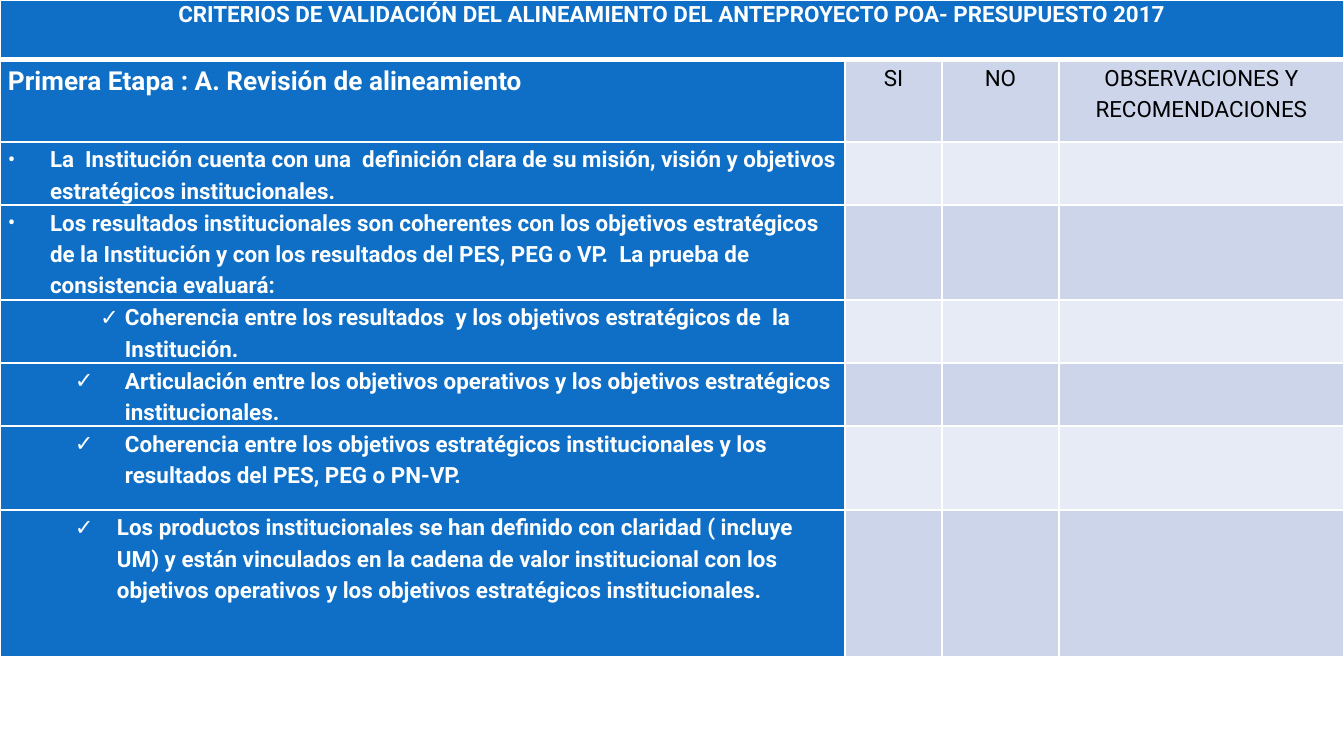
from lxml import etree
from pptx import Presentation
from pptx.dml.color import RGBColor
from pptx.enum.text import PP_ALIGN
from pptx.oxml.ns import qn
from pptx.util import Pt

CENTER, LEFT = PP_ALIGN.CENTER, PP_ALIGN.LEFT
PX = 914400 / 134.4
COLORS = {
    "blue": "0F6FC6",
    "band_dark": "CCD5EA",
    "band_light": "E7EBF5",
    "white": "FFFFFF",
    "black": "000000",
}
FONT = "Roboto"


def px(value):
    return round(value * PX)


def write_cell(cell, text, size, color, bold, alignment, bullet=None, spacing=1.2):
    cell.text_frame.text = text
    paragraph = cell.text_frame.paragraphs[0]
    paragraph.alignment = alignment
    paragraph.line_spacing = spacing
    if bullet:
        character, level, margin, indent = bullet
        paragraph.level = level
        properties = paragraph._p.get_or_add_pPr()
        properties.set("marL", str(px(margin)))
        properties.set("indent", str(px(indent)))
        etree.SubElement(properties, qn("a:buFont")).set("typeface", FONT)
        etree.SubElement(properties, qn("a:buChar")).set("char", character)
    for run in paragraph.runs:
        run.font.name = FONT
        run.font.size = Pt(size)
        run.font.bold = bold
        run.font.color.rgb = RGBColor.from_string(COLORS[color])


presentation = Presentation()
presentation.slide_width = px(1344)
presentation.slide_height = px(756)
slide = presentation.slides.add_slide(presentation.slide_layouts[6])

column_widths = [845, 97, 117, 285]
row_heights = [60, 82, 63, 95, 63, 63, 84, 147]
shape = slide.shapes.add_table(
    len(row_heights), len(column_widths),
    0, 0, px(sum(column_widths)), px(sum(row_heights)),
)
table = shape.table
table.first_row = False
table.horz_banding = False
for column, width in zip(table.columns, column_widths):
    column.width = px(width)
for row, height in zip(table.rows, row_heights):
    row.height = px(height)

for row_index, row in enumerate(table.rows):
    for column_index, cell in enumerate(row.cells):
        cell.margin_left = cell.margin_right = px(8)
        cell.margin_top = cell.margin_bottom = 0
        for side in ("L", "R", "T", "B"):
            thick = (row_index, side) in ((0, "B"), (1, "T"))
            line = etree.SubElement(cell._tc.get_or_add_tcPr(), qn(f"a:ln{side}"))
            line.set("w", str(Pt(3 if thick else 1)))
            line_fill = etree.SubElement(line, qn("a:solidFill"))
            etree.SubElement(line_fill, qn("a:srgbClr")).set("val", COLORS["white"])
        if row_index == 0 or column_index == 0:
            fill = "blue"
        else:
            fill = "band_dark" if row_index % 2 else "band_light"
        cell.fill.solid()
        cell.fill.fore_color.rgb = RGBColor.from_string(COLORS[fill])

table.cell(0, 0).merge(table.cell(0, 3))
write_cell(
    table.cell(0, 0),
    "CRITERIOS DE VALIDACIÓN DEL ALINEAMIENTO DEL ANTEPROYECTO POA- PRESUPUESTO 2017",
    12, "white", True, CENTER, spacing=1.05,
)
write_cell(
    table.cell(1, 0), "Primera Etapa : A. Revisión de alineamiento",
    14, "white", True, LEFT,
)
headings = ["SI", "NO", "OBSERVACIONES Y RECOMENDACIONES"]
for column_index, heading in enumerate(headings, start=1):
    write_cell(table.cell(1, column_index), heading, 12, "black", False, CENTER)

criteria = [
    ("La  Institución cuenta con una  definición clara de su misión, visión y "
     "objetivos estratégicos institucionales.", ("•", 0, 42, -42)),
    ("Los resultados institucionales son coherentes con los objetivos estratégicos  "
     "de la Institución y con los resultados del PES, PEG o VP.  La prueba de "
     "consistencia evaluará:", ("•", 0, 42, -42)),
    ("Coherencia entre los resultados  y los objetivos estratégicos de  la "
     "Institución.", ("✓", 0, 117, -25)),
    ("Articulación entre los objetivos operativos y los objetivos estratégicos "
     "institucionales.", ("✓", 1, 117, -50)),
    ("Coherencia entre los objetivos estratégicos institucionales y los "
     "resultados del PES, PEG o PN-VP.", ("✓", 1, 117, -50)),
    ("Los productos institucionales se han definido con claridad ( incluye UM) y "
     "están vinculados en la cadena de valor institucional con los objetivos "
     "operativos y los objetivos estratégicos institucionales.", ("✓", 1, 109, -42)),
]
for row_index, (criterion, bullet) in enumerate(criteria, start=2):
    write_cell(table.cell(row_index, 0), criterion, 12, "white", True, LEFT, bullet)

presentation.save("out.pptx")
